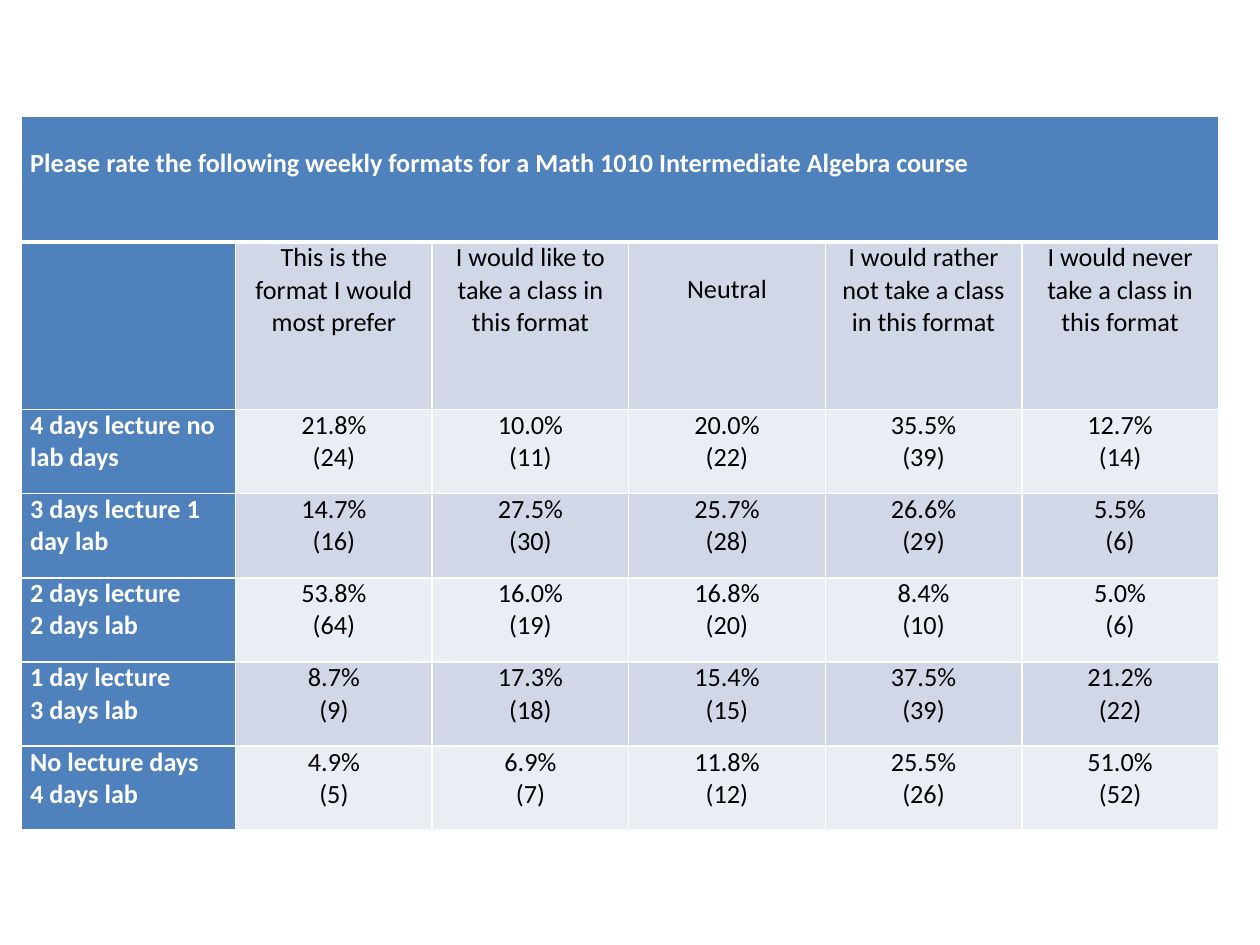
import dataclasses
import pptx
import pptx.dml.color
import pptx.enum.text
import pptx.oxml
import pptx.oxml.ns
import pptx.util

Inches = pptx.util.Inches
Pt = pptx.util.Pt
RGB = pptx.dml.color.RGBColor.from_string


@dataclasses.dataclass(frozen=True)
class Theme:
    """Colours, font and type size of the slide."""
    font: str = "Calibri"
    size: float = 15
    head: str = "4F81BD"
    bands: tuple = ("D0D8E8", "E9EDF4")
    light: str = "FFFFFF"
    dark: str = "000000"


THEME = Theme()
LINE = 0.25
TITLE = "Please rate the following weekly formats for a Math 1010 Intermediate Algebra course"
HEADS = [
    "",
    "This is the format I would most prefer",
    "I would like to take a class in this format",
    "Neutral",
    "I would rather not take a class in this format",
    "I would never take a class in this format",
]
RATES = [
    ("4 days lecture no lab days",
     [("21.8%", 24), ("10.0%", 11), ("20.0%", 22), ("35.5%", 39), ("12.7%", 14)]),
    ("3 days lecture 1 day lab",
     [("14.7%", 16), ("27.5%", 30), ("25.7%", 28), ("26.6%", 29), ("5.5%", 6)]),
    ("2 days lecture\n2 days lab",
     [("53.8%", 64), ("16.0%", 19), ("16.8%", 20), ("8.4%", 10), ("5.0%", 6)]),
    ("1 day lecture\n3 days lab",
     [("8.7%", 9), ("17.3%", 18), ("15.4%", 15), ("37.5%", 39), ("21.2%", 22)]),
    ("No lecture days\n4 days lab",
     [("4.9%", 5), ("6.9%", 7), ("11.8%", 12), ("25.5%", 26), ("51.0%", 52)]),
]


def rule(cell, top=1, base=1):
    """Draw light borders round a cell, with the given top and base widths."""
    props = cell._tc.get_or_add_tcPr()
    for spot, (side, width) in enumerate(zip("LRTB", (1, 1, top, base))):
        props.insert(spot, pptx.oxml.parse_xml(
            f'<a:ln{side} {pptx.oxml.ns.nsdecls("a")} w="{Pt(width)}">'
            f'<a:solidFill><a:srgbClr val="{THEME.light}"/></a:solidFill>'
            f'</a:ln{side}>'))


def fill(cell, text, tint, head, top=0):
    """Write and format the text of one cell."""
    cell.fill.solid()
    cell.fill.fore_color.rgb = RGB(tint)
    cell.margin_left = cell.margin_right = Inches(0.07)
    cell.margin_top, cell.margin_bottom = Inches(top), 0
    cell.text = text
    align = pptx.enum.text.PP_ALIGN
    for para in cell.text_frame.paragraphs:
        para.alignment = align.LEFT if head else align.CENTER
        para.font.name = THEME.font
        para.font.size = Pt(THEME.size)
        para.font.bold = head
        para.font.color.rgb = RGB(THEME.light if head else THEME.dark)


def survey(slide, left, top, width, height):
    """Place the survey table in the given box."""
    body = [HEADS] + [
        [label] + [f"{share}\n({count})" for share, count in rates]
        for label, rates in RATES]
    rows, cols = len(body) + 1, len(HEADS)
    table = slide.shapes.add_table(rows, cols, left, top, width, height).table
    table.first_row = table.horz_banding = False

    first = Inches(1.7)
    for col, column in enumerate(table.columns):
        column.width = first if col == 0 else (width - first) // (cols - 1)
    tall = [Inches(1), Inches(1.33)]
    rest = (height - sum(tall)) // len(RATES)
    for row, size in zip(table.rows, tall + [rest] * len(RATES)):
        row.height = size

    title = table.cell(0, 0)
    title.merge(table.cell(0, cols - 1))
    fill(title, TITLE, THEME.head, True, LINE)
    for row, texts in enumerate(body, 1):
        for col, text in enumerate(texts):
            tint = THEME.head if col == 0 else THEME.bands[(row - 1) % 2]
            drop = LINE if text == "Neutral" else 0
            fill(table.cell(row, col), text, tint, col == 0, drop)
    for row in range(rows):
        for col in range(cols):
            rule(table.cell(row, col), 3 if row == 1 else 1, 3 if row == 0 else 1)


def main():
    """Build the slide and save it."""
    deck = pptx.Presentation()
    deck.slide_width, deck.slide_height = Inches(10), Inches(7.5)
    slide = deck.slides.add_slide(deck.slide_layouts[6])
    survey(slide, Inches(0.17), Inches(0.92), Inches(9.5), Inches(5.67))
    deck.save("out.pptx")


if __name__ == "__main__":
    main()
